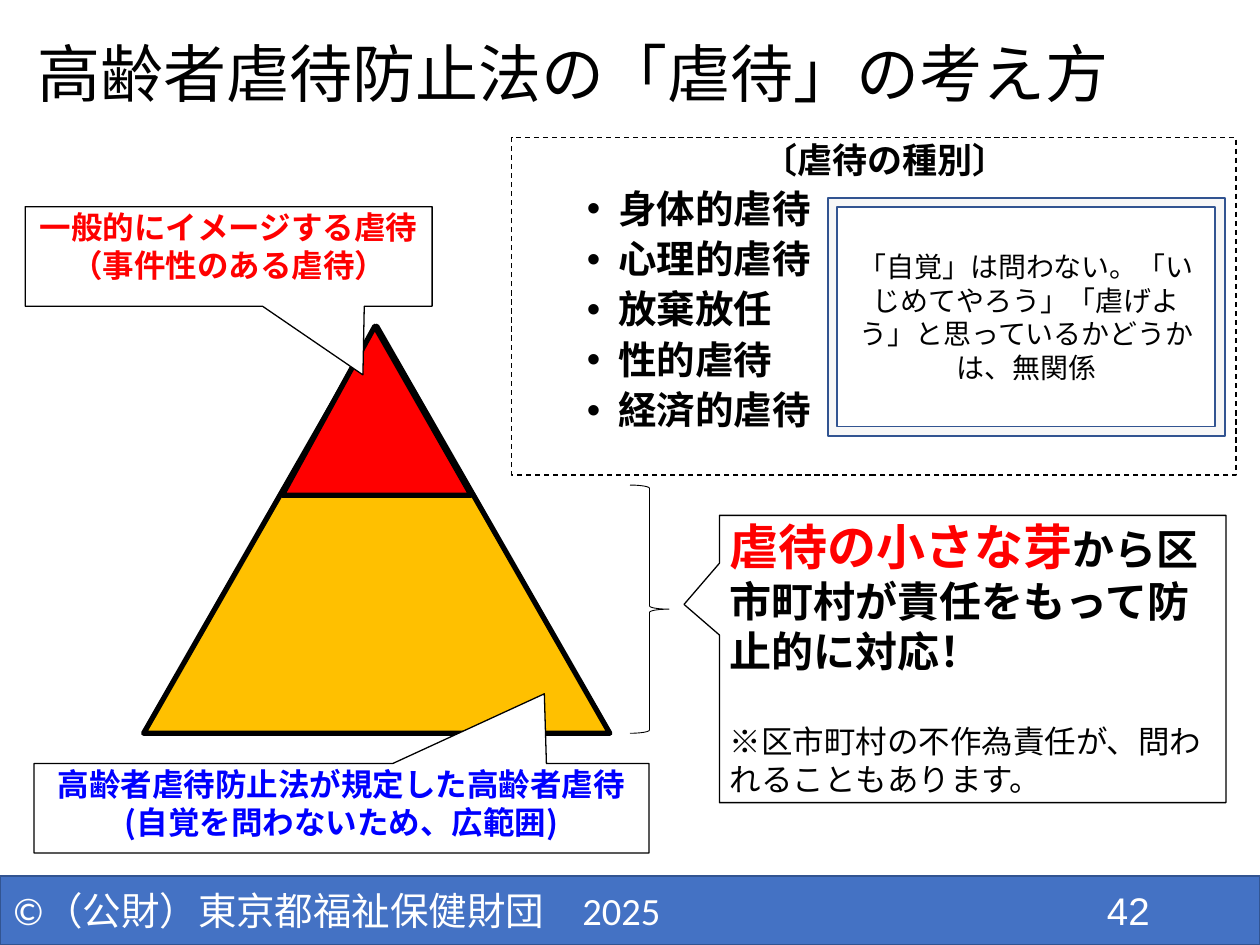
"""Build the slide on how the elder abuse prevention law views abuse."""
from dataclasses import dataclass
from typing import Optional

import lxml.etree
import pptx
import pptx.dml.color
import pptx.enum.dml
import pptx.enum.shapes
import pptx.enum.text
import pptx.oxml.ns
import pptx.util

Inches = pptx.util.Inches
Pt = pptx.util.Pt
Kind = pptx.enum.shapes.MSO_SHAPE
Align = pptx.enum.text.PP_ALIGN
Anchor = pptx.enum.text.MSO_ANCHOR
qn = pptx.oxml.ns.qn
NOTO = "Noto Sans CJK JP"
BLACK, WHITE, RED, BLUE = "000000", "FFFFFF", "FF0000", "0000FF"


@dataclass(frozen=True)
class Run:
    text: str
    size: float
    color: str = BLACK
    bold: bool = False
    font: str = NOTO


@dataclass(frozen=True)
class Para:
    runs: tuple[Run, ...]
    align: Align = Align.LEFT
    before: float = 0
    line: Optional[float] = None
    left: float = 0
    hang: float = 0
    bullet: str = ""


@dataclass(frozen=True)
class Box:
    kind: Kind
    at: tuple[float, float, float, float]
    fill: Optional[str] = None
    edge: Optional[str] = BLACK
    width: float = 0.75
    adjust: tuple[float, ...] = ()
    paras: tuple[Para, ...] = ()
    anchor: Anchor = Anchor.TOP
    inset: tuple[float, float] = (0.1, 0.05)
    dash: bool = False
    alpha: Optional[int] = None


def tint(code: str) -> pptx.dml.color.RGBColor:
    return pptx.dml.color.RGBColor.from_string(code)


def add_run(para, run: Run) -> None:
    item = para.add_run()
    item.text = run.text
    item.font.size = Pt(run.size)
    item.font.bold = run.bold
    item.font.name = run.font
    item.font.color.rgb = tint(run.color)
    props = item.font._element
    lxml.etree.SubElement(props, qn("a:ea"), typeface=NOTO)


def add_text(frame, box: Box) -> None:
    frame.word_wrap = True
    frame.vertical_anchor = box.anchor
    frame.margin_left = frame.margin_right = Inches(box.inset[0])
    frame.margin_top = frame.margin_bottom = Inches(box.inset[1])
    for index, data in enumerate(box.paras):
        para = frame.add_paragraph() if index else frame.paragraphs[0]
        para.alignment = data.align
        para.space_before = Pt(data.before)
        if data.line:
            para.line_spacing = data.line
        props = para._p.get_or_add_pPr()
        props.set("marL", str(Inches(data.left)))
        props.set("indent", str(Inches(-data.hang)))
        if data.bullet:
            lxml.etree.SubElement(props, qn("a:buFont"), typeface="Arial")
            lxml.etree.SubElement(props, qn("a:buChar"), char=data.bullet)
        for run in data.runs:
            add_run(para, run)


def add_box(slide, box: Box) -> None:
    shape = slide.shapes.add_shape(box.kind, *map(Inches, box.at))
    shape.shadow.inherit = False
    for index, value in enumerate(box.adjust):
        shape.adjustments[index] = value
    if box.fill:
        shape.fill.solid()
        shape.fill.fore_color.rgb = tint(box.fill)
        if box.alpha is not None:
            color = shape._element.spPr.find(qn("a:solidFill"))[0]
            lxml.etree.SubElement(color, qn("a:alpha"), val=str(box.alpha * 1000))
    else:
        shape.fill.background()
    if box.edge:
        shape.line.color.rgb = tint(box.edge)
        shape.line.width = Pt(box.width)
        if box.dash:
            shape.line.dash_style = pptx.enum.dml.MSO_LINE.DASH
    else:
        shape.line.fill.background()
    if box.paras:
        add_text(shape.text_frame, box)


def add_label(slide, box: Box) -> None:
    add_text(slide.shapes.add_textbox(*map(Inches, box.at)).text_frame, box)


def callout(at: tuple, tip: tuple, *paras: Para) -> Box:
    return Box(Kind.RECTANGULAR_CALLOUT, at, WHITE, adjust=tip, paras=paras,
               inset=(0.08, 0.01))


def main() -> None:
    deck = pptx.Presentation()
    deck.slide_width, deck.slide_height = Inches(10), Inches(7.5)
    slide = deck.slides.add_slide(deck.slide_layouts[6])

    types = ("身体的虐待", "心理的虐待", "放棄放任", "性的虐待", "経済的虐待")
    head = Para((Run("〔虐待の種別〕", 20, bold=True),), line=0.9, left=1.89)
    items = tuple(Para((Run(name, 22, bold=True),), before=5, line=0.9,
                       left=0.75, hang=0.25, bullet="•") for name in types)
    footer = Run("©（公財）東京都福祉保健財団\u30002025".replace("\u3000", "　"),
                 22, WHITE, font="Calibri")
    number = Run("42", 22, WHITE, font="Arial")
    title = Run("高齢者虐待防止法の「虐待」の考え方", 36)
    aware = Run("「自覚」は問わない。「いじめてやろう」「虐げよう」と思っているかどうかは、無関係",
                16, font="Calibri")
    image = ("一般的にイメージする虐待", "（事件性のある虐待）")
    law = Run("高齢者虐待防止法が規定した高齢者虐待(自覚を問わないため、広範囲)",
              18, BLUE, True)
    duty = (Run("虐待の小さな芽", 28, RED, True),
            Run("から区市町村が責任をもって防止的に対応！", 24, bold=True))
    note = Run("※区市町村の不作為責任が、問われることもあります。", 18)

    add_box(slide, Box(Kind.RECTANGLE, (0, 6.95, 10, 0.55), "4472C4", "325491", 1,
                       paras=(Para((footer,)),), anchor=Anchor.MIDDLE))
    add_label(slide, Box(Kind.RECTANGLE, (7.83, 6.99, 2.25, 0.4),
                         paras=(Para((number,), Align.CENTER),)))
    add_label(slide, Box(Kind.RECTANGLE, (0.2, 0.23, 9.61, 0.77),
                         paras=(Para((title,), line=0.9),), anchor=Anchor.MIDDLE))
    boxes = (
        Box(Kind.ISOSCELES_TRIANGLE, (1.14, 2.59, 3.7, 3.23), "FFC000", width=3),
        Box(Kind.RECTANGLE, (4.06, 1.09, 5.75, 2.68), paras=(head, *items), dash=True),
        Box(Kind.ISOSCELES_TRIANGLE, (2.24, 2.59, 1.5, 1.34), RED, width=3,
            adjust=(0.49,)),
        callout((0.2, 1.64, 3.23, 0.79), (0.33, 1.19),
                *(Para((Run(line, 18, RED, True),), Align.CENTER) for line in image)),
        callout((0.27, 6.06, 4.88, 0.71), (0.33, -1.28), Para((law,), Align.CENTER)),
        Box(Kind.RIGHT_BRACE, (5, 3.85, 0.31, 1.97), width=0.5),
        callout((5.71, 4.09, 4.02, 2.28), (-0.57, -0.19),
                Para(duty), Para((note,), before=26)),
        Box(Kind.FRAME, (6.57, 1.57, 3.15, 1.89), "EDEDED", "325491", 1, (0.04,),
            (Para((aware,), Align.CENTER),), Anchor.MIDDLE, alpha=40),
    )
    for box in boxes:
        add_box(slide, box)
    deck.save("out.pptx")


if __name__ == "__main__":
    main()
